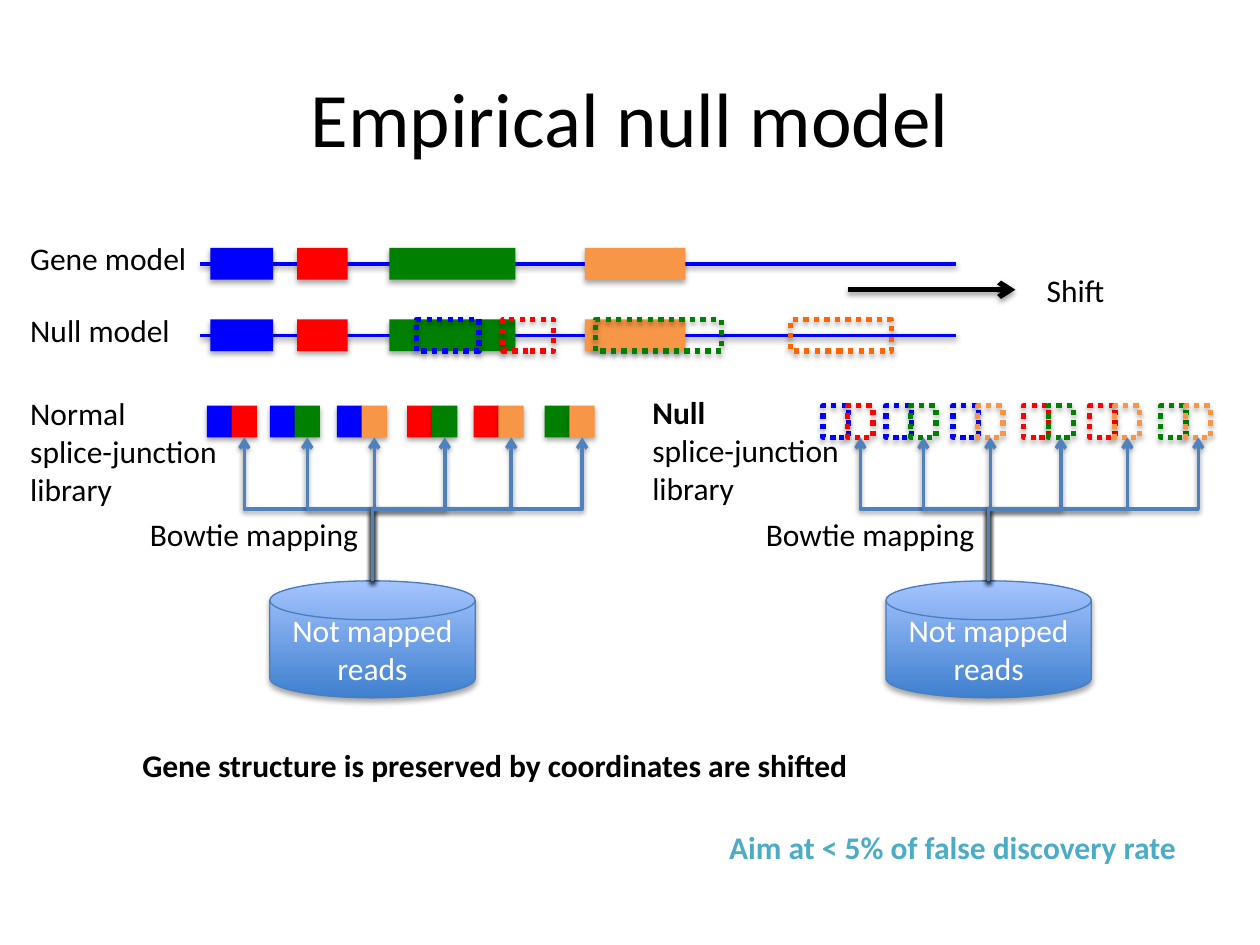
import itertools

import lxml.etree
import pptx
import pptx.dml.color
import pptx.enum.dml
import pptx.enum.shapes
import pptx.enum.text
import pptx.oxml.ns
import pptx.util

Cm = pptx.util.Cm
Pt = pptx.util.Pt
SHAPE = pptx.enum.shapes.MSO_SHAPE
CONNECTOR = pptx.enum.shapes.MSO_CONNECTOR
ALIGN = pptx.enum.text.PP_ALIGN
ANCHOR = pptx.enum.text.MSO_ANCHOR
qn = pptx.oxml.ns.qn

FONT = "Calibri"
BLACK, WHITE, BLUE, STEEL, TEAL = "000000", "FFFFFF", "0000FF", "4F81BD", "4BACC6"
DISK_BOTTOM, DISK_TOP, DISK_LINE = "3F80CE", "A4C4FF", "4B7EBC"

EXONS = [
    {"left": 4.24, "width": 1.27, "color": BLUE, "shifted": BLUE},
    {"left": 5.99, "width": 1.02, "color": "FF0000", "shifted": "FF0000"},
    {"left": 7.85, "width": 2.54, "color": "008000", "shifted": "008000"},
    {"left": 11.79, "width": 2.03, "color": "F79646", "shifted": "FF6600"},
]
EXON_HEIGHT = 0.64
GENE_TOP, NULL_TOP, SHIFT = 5.0, 6.44, 4.15
INTRON_LEFT, INTRON_RIGHT = 4.04, 19.28

JUNCTION_OFFSETS = [0, 1.27, 2.62, 4.04, 5.38, 6.81]
JUNCTION_TOP, HALF_WIDTH, HALF_STEP = 8.18, 0.51, 0.5
DISK_TOP_EDGE, DISK_WIDTH, DISK_HEIGHT = 11.71, 4.14, 2.36

LIBRARIES = [
    {"name": "Normal", "bold": False, "label": (0.36, 7.82), "left": 4.17, "dotted": False},
    {"name": "Null", "bold": True, "label": (12.9, 7.8), "left": 16.59, "dotted": True},
]

LABELS = [
    ("Gene model", 0.36, 4.7, 3.68, False, BLACK),
    ("Null model", 0.36, 6.15, 3.35, False, BLACK),
    ("Shift", 20.85, 5.33, 1.68, False, BLACK),
    ("Gene structure is preserved by coordinates are shifted", 2.62, 14.91, 14.88, True, BLACK),
    ("Aim at < 5% of false discovery rate", 14.45, 16.56, 9.68, True, TEAL),
]


def rgb(color):
    return pptx.dml.color.RGBColor.from_string(color)


def add_run(paragraph, text, size=18, bold=False, color=BLACK):
    run = paragraph.add_run()
    run.text = text
    run.font.name = FONT
    run.font.size = Pt(size)
    run.font.bold = bold
    run.font.color.rgb = rgb(color)


def add_shadow(properties, effects, distance, opacity):
    shadow = lxml.etree.SubElement(
        effects, qn("a:outerShdw"), blurRad=str(Pt(3.1)), dist=str(Pt(distance)),
        dir="5400000", rotWithShape="0")
    color = lxml.etree.SubElement(shadow, qn("a:srgbClr"), val=BLACK)
    lxml.etree.SubElement(color, qn("a:alpha"), val=str(opacity * 1000))


def add_shape(slide, kind, left, top, width, height):
    shape = slide.shapes.add_shape(kind, Cm(left), Cm(top), Cm(width), Cm(height))
    shape.shadow.inherit = False
    properties = shape.element.spPr
    return shape, properties


def finish_shape(properties):
    add_shadow(properties, properties.find(qn("a:effectLst")), 1.8, 35)


def add_box(slide, left, top, width, color, dotted=False):
    shape, properties = add_shape(slide, SHAPE.RECTANGLE, left, top, width, EXON_HEIGHT)
    if dotted:
        shape.fill.background()
        shape.line.color.rgb = rgb(color)
        shape.line.width = Pt(3)
        shape.line.dash_style = pptx.enum.dml.MSO_LINE.ROUND_DOT
    else:
        shape.fill.solid()
        shape.fill.fore_color.rgb = rgb(color)
        shape.line.fill.background()
    finish_shape(properties)


def add_line(slide, kind, start, end, color, width, arrow=False):
    connector = slide.shapes.add_connector(kind, *(Cm(value) for value in start + end))
    connector.line.color.rgb = rgb(color)
    connector.line.width = Pt(width)
    properties = connector.element.spPr
    if arrow:
        lxml.etree.SubElement(properties.find(qn("a:ln")), qn("a:tailEnd"), type="arrow")
    effects = lxml.etree.SubElement(properties, qn("a:effectLst"))
    add_shadow(properties, effects, 1.6, 38)
    return connector


def add_upward_elbow(slide, start, end):
    center_x, center_y = (start[0] + end[0]) / 2, (start[1] + end[1]) / 2
    half_length, half_spread = (start[1] - end[1]) / 2, abs(end[0] - start[0]) / 2
    direction = 1 if end[0] >= start[0] else -1
    connector = add_line(
        slide, CONNECTOR.ELBOW,
        (center_x + direction * half_length, center_y + half_spread),
        (center_x - direction * half_length, center_y - half_spread),
        STEEL, 2, arrow=True)
    rotation = 90 if direction == 1 else 270
    connector.element.spPr.find(qn("a:xfrm")).set("rot", str(rotation * 60000))


def add_label(slide, lines, left, top, width, color=BLACK):
    box = slide.shapes.add_textbox(Cm(left), Cm(top), Cm(width), Cm(0.25 + 0.77 * len(lines)))
    frame = box.text_frame
    frame.word_wrap = False
    frame.auto_size = pptx.enum.text.MSO_AUTO_SIZE.SHAPE_TO_FIT_TEXT
    for index, (text, bold) in enumerate(lines):
        paragraph = frame.add_paragraph() if index else frame.paragraphs[0]
        add_run(paragraph, text, bold=bold, color=color)


def add_title(slide, text):
    box = slide.shapes.add_textbox(Cm(1.27), Cm(0.76), Cm(22.86), Cm(3.18))
    box.text_frame.word_wrap = True
    box.text_frame.vertical_anchor = ANCHOR.MIDDLE
    paragraph = box.text_frame.paragraphs[0]
    paragraph.alignment = ALIGN.CENTER
    add_run(paragraph, text, size=44)


def add_disk(slide, left):
    disk, properties = add_shape(
        slide, SHAPE.FLOWCHART_MAGNETIC_DISK, left, DISK_TOP_EDGE, DISK_WIDTH, DISK_HEIGHT)
    disk.fill.gradient()
    disk.fill.gradient_angle = 90
    for stop, position, color in zip(disk.fill.gradient_stops, (0, 1), (DISK_BOTTOM, DISK_TOP)):
        stop.position = position
        stop.color.rgb = rgb(color)
    disk.line.color.rgb = rgb(DISK_LINE)
    disk.line.width = Pt(0.75)
    finish_shape(properties)
    disk.text_frame.word_wrap = True
    disk.text_frame.vertical_anchor = ANCHOR.MIDDLE
    paragraph = disk.text_frame.paragraphs[0]
    paragraph.alignment = ALIGN.CENTER
    add_run(paragraph, "Not mapped reads", color=WHITE)


def add_gene(slide, top):
    middle = top + EXON_HEIGHT / 2
    add_line(slide, CONNECTOR.STRAIGHT, (INTRON_LEFT, middle), (INTRON_RIGHT, middle), BLUE, 2)
    for exon in EXONS:
        add_box(slide, exon["left"], top, exon["width"], exon["color"])


def add_library(slide, library):
    lines = [(library["name"], library["bold"]), ("splice-junction", False), ("library", False)]
    add_label(slide, lines, *library["label"], 4.32)
    disk_left = library["left"] + 1.27
    add_disk(slide, disk_left)
    add_label(slide, [("Bowtie mapping", False)], library["left"] - 1.4, 10.25, 4.75)
    source = (disk_left + DISK_WIDTH / 2, DISK_TOP_EDGE)
    for offset, pair in zip(JUNCTION_OFFSETS, itertools.combinations(EXONS, 2)):
        left = library["left"] + offset
        for index, exon in enumerate(pair):
            add_box(slide, left + index * HALF_STEP, JUNCTION_TOP, HALF_WIDTH,
                    exon["color"], library["dotted"])
        target = (left + HALF_STEP + HALF_WIDTH / 2, JUNCTION_TOP + EXON_HEIGHT)
        add_upward_elbow(slide, source, target)


def main():
    presentation = pptx.Presentation()
    presentation.slide_width, presentation.slide_height = Cm(25.4), Cm(19.05)
    slide = presentation.slides.add_slide(presentation.slide_layouts[6])
    add_title(slide, "Empirical null model")
    for top in (GENE_TOP, NULL_TOP):
        add_gene(slide, top)
    for exon in EXONS:
        add_box(slide, exon["left"] + SHIFT, NULL_TOP, exon["width"], exon["shifted"], dotted=True)
    for library in LIBRARIES:
        add_library(slide, library)
    add_line(slide, CONNECTOR.STRAIGHT, (17.09, 5.84), (20.47, 5.84), BLACK, 3, arrow=True)
    for text, left, top, width, bold, color in LABELS:
        add_label(slide, [(text, bold)], left, top, width, color)
    presentation.save("out.pptx")


if __name__ == "__main__":
    main()
